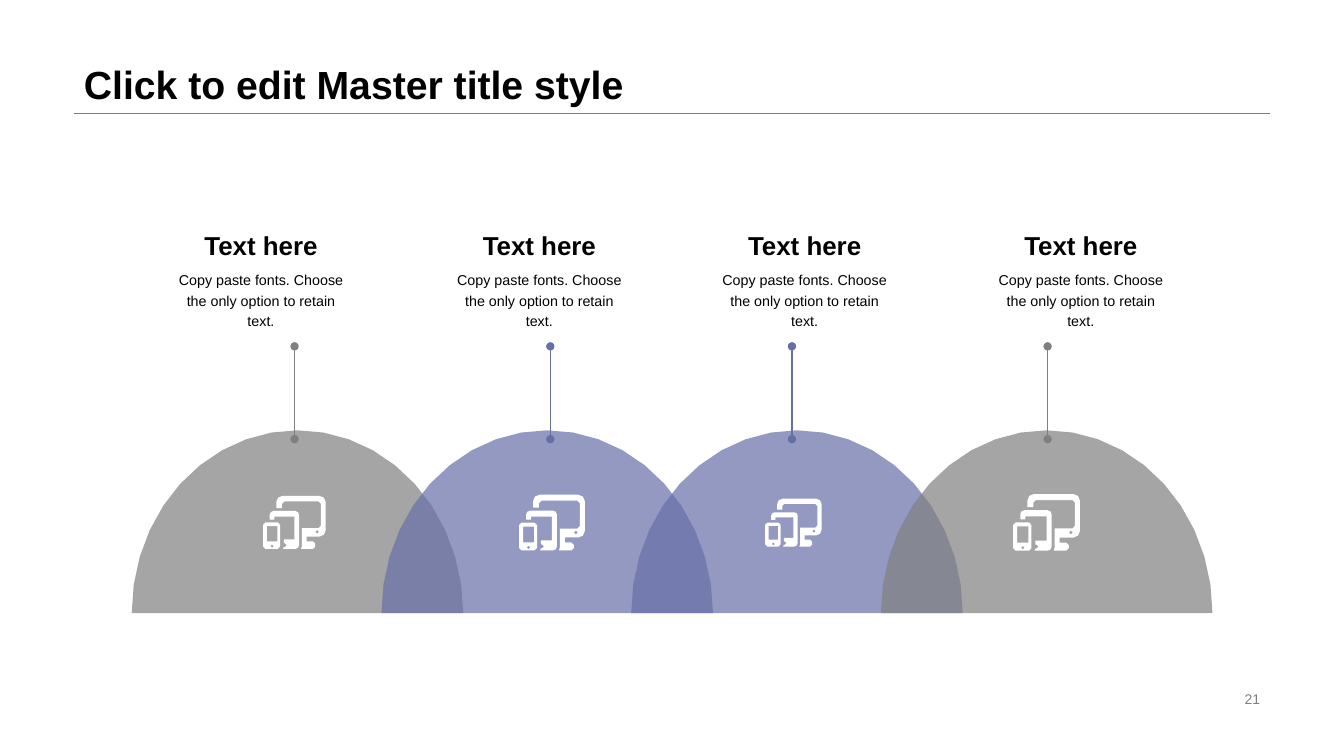
import math

import pptx
import pptx.dml.color
import pptx.enum.shapes
import pptx.enum.text
import pptx.oxml
import pptx.oxml.ns
import pptx.util

Pt = pptx.util.Pt
ALIGN = pptx.enum.text.PP_ALIGN
ANCHOR = pptx.enum.text.MSO_ANCHOR
BLACK = pptx.dml.color.RGBColor(0x00, 0x00, 0x00)
WHITE = pptx.dml.color.RGBColor(0xFF, 0xFF, 0xFF)
GRAY = pptx.dml.color.RGBColor(0x80, 0x80, 0x80)
VIOLET = pptx.dml.color.RGBColor(0x67, 0x6F, 0xA7)

FONT = "Arial"
DRAWING_NS = pptx.oxml.ns.nsdecls("a")
HEADING = "Text here"
BODY = "Copy paste fonts. Choose the only option to retain text."

DOME_LEFT, DOME_TOP, DOME_WIDTH, DOME_HEIGHT = 94.1, 307.4, 236.8, 130.5
DOME_PITCH = 178.4
LABEL_TOP, LABEL_WIDTH = 162, 139.7
STEM_TOP, STEM_BOTTOM = 247.4, 313.7

STAGES = [
    {"color": GRAY, "label": 116.6, "stem": 210.4, "icon": (187.9, 354.2, 44.7)},
    {"color": VIOLET, "label": 315.4, "stem": 393.1, "icon": (370.8, 353.4, 46.9)},
    {"color": VIOLET, "label": 504.9, "stem": 565.7, "icon": (546.6, 356.2, 40.3)},
    {"color": GRAY, "label": 702.2, "stem": 748.3, "icon": (723.7, 352.9, 47.7)},
]


def square(left, top, right, bottom, radius=0):
    """Return the corners of a rectangle, each with its rounding radius."""
    return [(left, top, radius), (right, top, radius),
            (right, bottom, radius), (left, bottom, radius)]


ICON_UNITS = 66
DEVICE_CONTOURS = [
    square(0, 28, 18, 56, 2.5),
    square(4, 32, 15, 48),
    square(7.7, 51.2, 11.3, 54.8, 1.8),
    [(7, 16, 4), (38, 16, 4), (38, 56, 4), (21, 56, 0), (22, 54, 0),
     (25, 54, 2), (25, 50, 2), (22, 50, 0), (22, 46, 0), (33, 46, 0),
     (33, 22, 0), (12, 22, 0), (12, 25, 0), (7, 25, 0)],
    [(14, 0, 6.5), (66, 0, 6.5), (66, 43, 6.5), (46, 43, 0), (46, 48, 0),
     (55, 48, 2.5), (55, 56, 2.5), (40, 56, 0), (41, 53, 0), (41, 34, 0),
     (61, 34, 2.5), (61, 6, 2.5), (20, 6, 2.5), (20, 13, 0), (14, 13, 0)],
    square(55, 36, 59, 40, 2),
]


def add_text(slide, text, left, top, width, height, *, size, color=BLACK,
             bold=False, align=ALIGN.LEFT, anchor=ANCHOR.MIDDLE, spacing=1.0):
    """Add a wrapped text box with one formatted paragraph."""
    box = slide.shapes.add_textbox(Pt(left), Pt(top), Pt(width), Pt(height))
    frame = box.text_frame
    frame.word_wrap = True
    frame.vertical_anchor = anchor
    paragraph = frame.paragraphs[0]
    paragraph.alignment = align
    paragraph.line_spacing = spacing
    run = paragraph.add_run()
    run.text = text
    run.font.name = FONT
    run.font.size = Pt(size)
    run.font.bold = bold
    run.font.color.rgb = color


def add_line(slide, start, end, color, width, dotted_ends=False):
    """Add a straight line, with round dots at both ends if asked."""
    line = slide.shapes.add_connector(
        pptx.enum.shapes.MSO_CONNECTOR.STRAIGHT, *map(Pt, start + end))
    line.line.color.rgb = color
    line.line.width = Pt(width)
    properties = line._element.spPr
    if dotted_ends:
        for tag in ("headEnd", "tailEnd"):
            properties.ln.append(pptx.oxml.parse_xml(f'<a:{tag} {DRAWING_NS} type="oval"/>'))
    properties.append(pptx.oxml.parse_xml(f"<a:effectLst {DRAWING_NS}/>"))


def add_outline(slide, contours, color, opacity=100):
    """Add one filled freeform from closed contours given in points."""
    contours = [[(Pt(x), Pt(y)) for x, y in contour] for contour in contours]
    builder = slide.shapes.build_freeform(*contours[0][0])
    for number, contour in enumerate(contours):
        if number:
            builder.move_to(*contour[0])
        builder.add_line_segments(contour[1:], close=True)
    outline = builder.convert_to_shape()
    outline.shadow.inherit = False
    outline.line.fill.background()
    outline.fill.solid()
    outline.fill.fore_color.rgb = color
    if opacity < 100:
        fill_color = outline._element.spPr.find(".//" + pptx.oxml.ns.qn("a:srgbClr"))
        fill_color.append(pptx.oxml.parse_xml(
            f'<a:alpha {DRAWING_NS} val="{opacity * 1000}"/>'))


def round_corners(corners):
    """Return the points of a polygon whose right-angled corners become arcs."""
    points = []
    for index, (x, y, radius) in enumerate(corners):
        if not radius:
            points.append((x, y))
            continue
        (before_x, before_y), (after_x, after_y) = (
            ((near_x - x) / math.dist((x, y), (near_x, near_y)),
             (near_y - y) / math.dist((x, y), (near_x, near_y)))
            for near_x, near_y, _ in (corners[index - 1],
                                      corners[(index + 1) % len(corners)]))
        steps = 2 if radius > 3 else 1
        for step in range(steps + 1):
            angle = math.pi / 2 * step / steps
            toward_before = radius * (1 - math.sin(angle))
            toward_after = radius * (1 - math.cos(angle))
            points.append((x + before_x * toward_before + after_x * toward_after,
                           y + before_y * toward_before + after_y * toward_after))
    return points


def add_header(slide, left, top, width, height):
    """Add the title and the rule along the bottom of its box."""
    add_line(slide, (left, top + height), (left + width, top + height), GRAY, 0.25)
    add_text(slide, "Click to edit Master title style", left, top, width, height,
             size=28, bold=True, anchor=ANCHOR.BOTTOM, spacing=0.9)


def add_label(slide, left, top, width):
    """Add a heading with its body text below."""
    add_text(slide, HEADING, left, top, width, 26,
             size=18.5, bold=True, align=ALIGN.CENTER)
    add_text(slide, BODY, left, top + 26.6, width, 49.7,
             size=10.2, align=ALIGN.CENTER, spacing=1.2)


def add_dome(slide, left, top, width, height, color):
    """Add a translucent half ellipse that fills its box."""
    steps = 20
    angles = [math.pi * step / steps for step in range(steps + 1)]
    arc = [(left + width / 2 * (1 - math.cos(angle)),
            top + height * (1 - math.sin(angle))) for angle in angles]
    add_outline(slide, [arc], color, opacity=70)


def add_devices_icon(slide, left, top, width):
    """Add the phone, tablet and monitor icon scaled to its width."""
    scale = width / ICON_UNITS
    contours = [[(left + x * scale, top + y * scale) for x, y in round_corners(corners)]
                for corners in DEVICE_CONTOURS]
    add_outline(slide, contours, WHITE)


def main():
    """Build the slide and save it."""
    deck = pptx.Presentation()
    deck.slide_width, deck.slide_height = Pt(960), Pt(540)
    slide = deck.slides.add_slide(deck.slide_layouts[6])
    add_header(slide, 52.9, 0, 854.4, 80.9)
    add_text(slide, "21", 678.2, 491, 229, 16.6, size=10, color=GRAY, align=ALIGN.RIGHT)
    for index, stage in enumerate(STAGES):
        add_label(slide, stage["label"], LABEL_TOP, LABEL_WIDTH)
        add_dome(slide, DOME_LEFT + index * DOME_PITCH, DOME_TOP,
                 DOME_WIDTH, DOME_HEIGHT, stage["color"])
    for stage in STAGES:
        add_line(slide, (stage["stem"], STEM_BOTTOM), (stage["stem"], STEM_TOP),
                 stage["color"], 1, dotted_ends=True)
        add_devices_icon(slide, *stage["icon"])
    deck.save("out.pptx")


if __name__ == "__main__":
    main()
